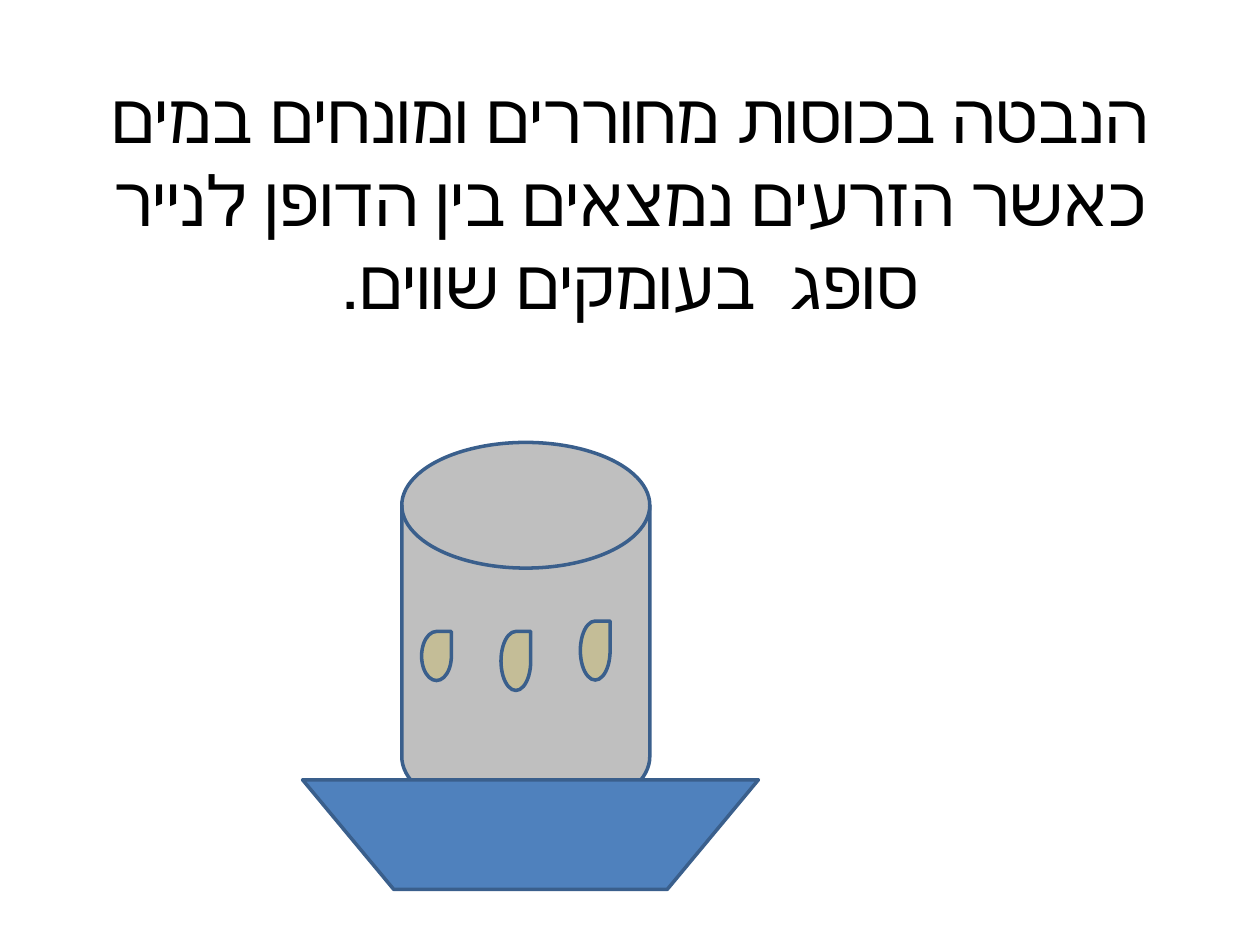
from dataclasses import dataclass

from pptx import Presentation
from pptx.dml.color import RGBColor
from pptx.enum.lang import MSO_LANGUAGE_ID
from pptx.enum.shapes import MSO_SHAPE
from pptx.enum.text import MSO_ANCHOR, PP_ALIGN
from pptx.util import Cm, Pt

CUP = MSO_SHAPE.FLOWCHART_MAGNETIC_DISK
TRAY = MSO_SHAPE.FLOWCHART_MANUAL_OPERATION
SEED = MSO_SHAPE.TEAR
MIDDLE = MSO_ANCHOR.MIDDLE
CENTER = PP_ALIGN.CENTER
HEBREW = MSO_LANGUAGE_ID.HEBREW


@dataclass(frozen=True)
class Theme:
    font: str = "Arial"
    size: float = 39.6
    text: str = "000000"
    cup: str = "BFBFBF"
    tray: str = "4F81BD"
    seed: str = "C4BD97"
    edge: str = "3A5F8C"
    width: float = 2


THEME = Theme()
TITLE = ("הנבטה בכוסות מחוררים ומונחים במים כאשר הזרעים "
         "נמצאים בין הדופן לנייר סופג  בעומקים שווים.")

# Seeds run left to right at an equal step: top and height of each
SEEDS = [(12.73, 0.99), (12.73, 1.19), (12.52, 1.19)]
SEED_LEFT, SEED_STEP, SEED_WIDTH = 8.5, 1.6, 0.6


def set_all(item, values):
    for name, value in values.items():
        setattr(item, name, value)


def add_title(slide, text, box):
    """Add a centred right-to-left heading."""
    frame = slide.shapes.add_textbox(*map(Cm, box)).text_frame
    set_all(frame, {"word_wrap": True, "vertical_anchor": MIDDLE})
    para = frame.paragraphs[0]
    para.alignment = CENTER
    para._p.get_or_add_pPr().set("rtl", "1")
    run = para.add_run()
    run.text = text
    set_all(run.font, {"name": THEME.font, "size": Pt(THEME.size),
                       "language_id": HEBREW})
    run.font.color.rgb = RGBColor.from_string(THEME.text)


def add_part(slide, kind, box, color):
    """Add a filled, outlined part of the drawing."""
    part = slide.shapes.add_shape(kind, *map(Cm, box))
    part.shadow.inherit = False
    part.fill.solid()
    part.fill.fore_color.rgb = RGBColor.from_string(color)
    part.line.color.rgb = RGBColor.from_string(THEME.edge)
    part.line.width = Pt(THEME.width)


def add_seeds(slide):
    for i, (top, height) in enumerate(SEEDS):
        left = SEED_LEFT + i * SEED_STEP
        add_part(slide, SEED, (left, top, SEED_WIDTH, height), THEME.seed)


def main():
    deck = Presentation()
    set_all(deck, {"slide_width": Cm(25.4), "slide_height": Cm(19.05)})
    slide = deck.slides.add_slide(deck.slide_layouts[6])
    add_title(slide, TITLE, (1.27, 0.76, 22.86, 6.5))
    add_part(slide, CUP, (8.1, 8.92, 5, 7.6), THEME.cup)
    add_part(slide, TRAY, (6.1, 15.72, 9.19, 2.21), THEME.tray)
    add_seeds(slide)
    deck.save("out.pptx")


if __name__ == "__main__":
    main()
